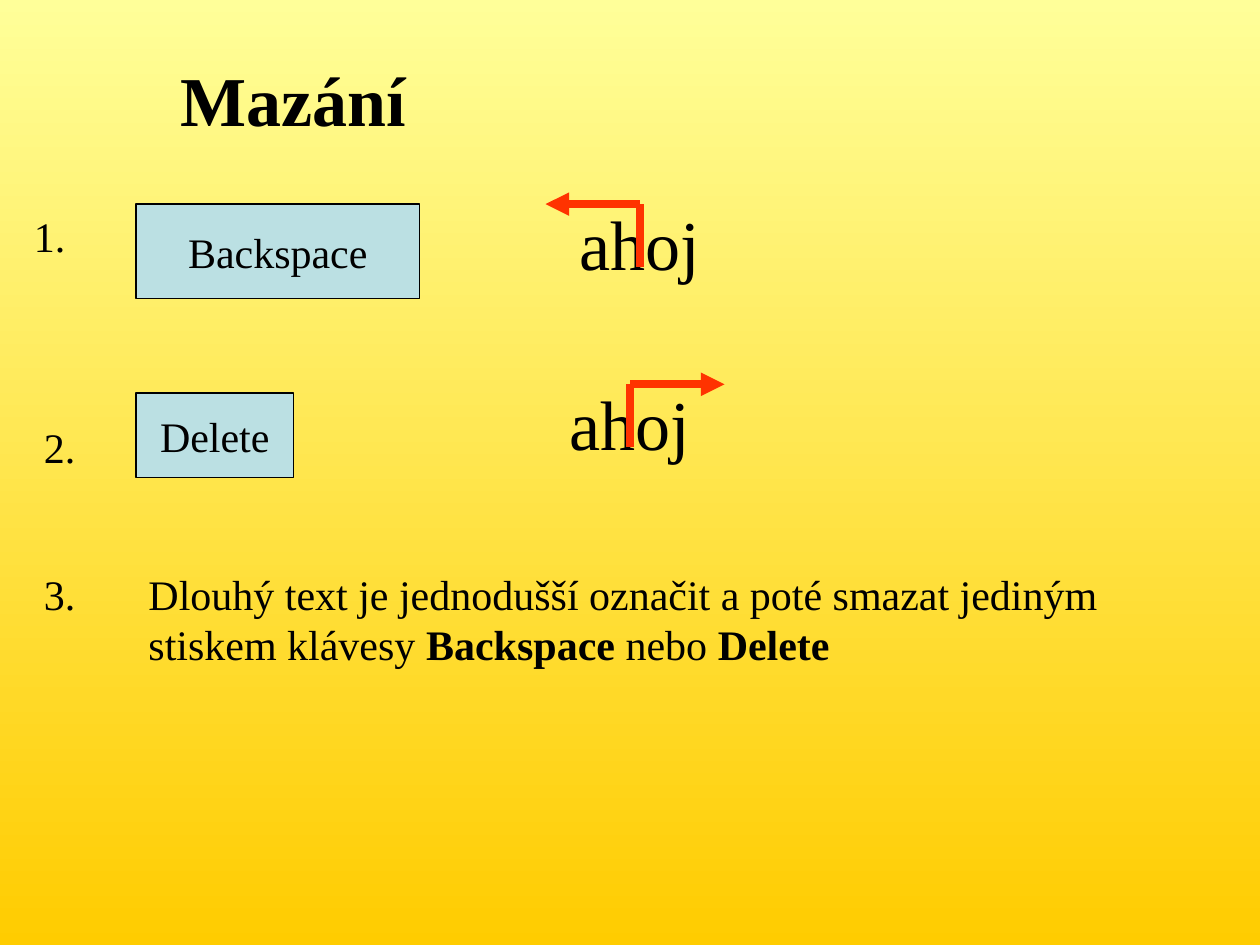
from dataclasses import dataclass

from lxml.etree import SubElement
from pptx import Presentation
from pptx.dml.color import RGBColor
from pptx.enum.shapes import MSO_CONNECTOR, MSO_SHAPE
from pptx.enum.text import MSO_ANCHOR, MSO_AUTO_SIZE, PP_ALIGN
from pptx.oxml.ns import qn
from pptx.util import Inches, Pt


@dataclass(frozen=True)
class Theme:
    """Colours, type sizes and line widths of the slide."""
    font: str = "Times New Roman"
    ink: RGBColor = RGBColor(0x00, 0x00, 0x00)
    key: RGBColor = RGBColor(0xBB, 0xE0, 0xE3)
    arrow: RGBColor = RGBColor(0xFF, 0x33, 0x00)
    sky: RGBColor = RGBColor(0xFF, 0xFF, 0x99)
    ground: RGBColor = RGBColor(0xFF, 0xCC, 0x00)
    large: int = 40
    normal: int = 24
    outline: float = 0.75
    stroke: float = 4.5


THEME = Theme()
COLUMNS_PER_INCH = 12
LINE_HEIGHT = 6
WORD_HEIGHT = 9.2


def grid(*units):
    """Turn columns or rows of the grid into lengths."""
    return [Inches(round(unit / COLUMNS_PER_INCH, 2)) for unit in units]


def write(frame, *parts, size=THEME.normal, bold=False, align=PP_ALIGN.LEFT,
          anchor=MSO_ANCHOR.TOP, wrap=True, fit=MSO_AUTO_SIZE.SHAPE_TO_FIT_TEXT):
    """Write one paragraph; parts alternate between plain and bold."""
    frame.word_wrap = wrap
    frame.auto_size = fit
    frame.vertical_anchor = anchor
    para = frame.paragraphs[0]
    para.alignment = align
    for index, text in enumerate(parts):
        span = para.add_run()
        span.text = text
        span.font.name = THEME.font
        span.font.size = Pt(size)
        span.font.bold = bold or index % 2 == 1
        span.font.color.rgb = THEME.ink


def paint_background(page):
    """Fill the page with a gradient that runs from top to bottom."""
    fill = page.background.fill
    fill.gradient()
    fill.gradient_angle = 270
    for stop, colour in zip(fill.gradient_stops, (THEME.sky, THEME.ground)):
        stop.color.rgb = colour


def add_title(page, text, left, top, width):
    """Place and format the title placeholder."""
    title = page.shapes.title
    title.left, title.top, title.width, title.height = grid(left, top, width, WORD_HEIGHT)
    write(title.text_frame, text, size=THEME.large, bold=True)


def add_text(page, *parts, left, top, width, height=LINE_HEIGHT, **format):
    """Add a text box on the grid."""
    box = page.shapes.add_textbox(*grid(left, top, width, height))
    write(box.text_frame, *parts, **format)


def add_key(page, text, left, top, width, height):
    """Add a keyboard key with its label."""
    key = page.shapes.add_shape(MSO_SHAPE.RECTANGLE, *grid(left, top, width, height))
    key.shadow.inherit = False
    key.fill.solid()
    key.fill.fore_color.rgb = THEME.key
    key.line.color.rgb = THEME.ink
    key.line.width = Pt(THEME.outline)
    write(key.text_frame, text, align=PP_ALIGN.CENTER, anchor=MSO_ANCHOR.MIDDLE,
          wrap=False, fit=MSO_AUTO_SIZE.NONE)


def add_stroke(page, start, end, head=False):
    """Add a straight stroke, with an arrowhead at its end if wanted."""
    stroke = page.shapes.add_connector(MSO_CONNECTOR.STRAIGHT, *grid(*start, *end))
    stroke.line.color.rgb = THEME.arrow
    stroke.line.width = Pt(THEME.stroke)
    if head:
        SubElement(stroke.line._get_or_add_ln(), qn("a:tailEnd"), type="triangle")
    SubElement(stroke._element.spPr, qn("a:effectLst"))


def add_deletion(page, word, caret, top, direction, width, wrap=True):
    """Add a word with a caret and an arrow in the direction of deletion."""
    add_text(page, word, left=caret - 7, top=top - 1, width=width,
             height=WORD_HEIGHT, size=THEME.large, wrap=wrap)
    corner = (caret, top)
    add_stroke(page, (caret, top + 6), corner)
    add_stroke(page, corner, (caret + 9 * direction, top), head=True)


def main():
    """Build the slide and save it."""
    deck = Presentation()
    deck.slide_width, deck.slide_height = grid(120, 90)
    page = deck.slides.add_slide(deck.slide_layouts[5])
    paint_background(page)
    add_title(page, "Mazání", 16, 4.8, 73)
    add_key(page, "Backspace", 13, 19.5, 27, 9)
    add_deletion(page, "ahoj", 61, 19.5, -1, width=41)
    add_key(page, "Delete", 13, 37.5, 15, 8)
    add_deletion(page, "ahoj", 60, 36.6, 1, width=14, wrap=False)
    for number, left, top in (("1.", 2, 19.5), ("2.", 3, 39.6), ("3.", 3, 53.5)):
        add_text(page, number, left=left, top=top, width=11 - left)
    add_text(page, "Dlouhý text je jednodušší označit a poté smazat jediným stiskem klávesy ",
             "Backspace", " nebo ", "Delete", left=13, top=53.5, width=93, height=10.8)
    deck.save("out.pptx")


if __name__ == "__main__":
    main()
